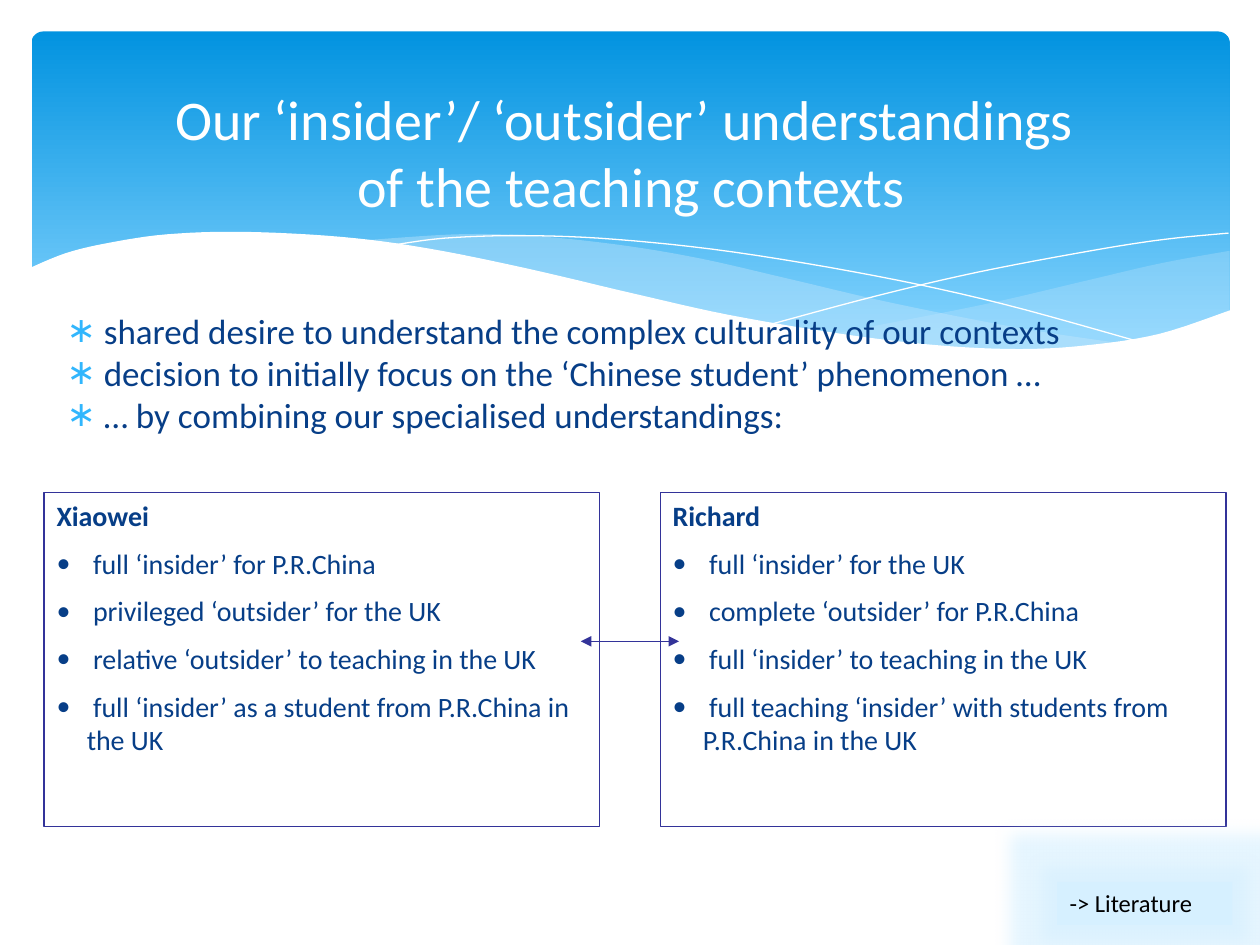
from dataclasses import dataclass

from lxml import etree
from pptx import Presentation
from pptx.dml.color import RGBColor
from pptx.enum.shapes import MSO_CONNECTOR, MSO_SHAPE
from pptx.enum.text import MSO_ANCHOR, PP_ALIGN
from pptx.oxml.ns import qn
from pptx.util import Inches, Pt

RECTANGLE, ROUNDED = MSO_SHAPE.RECTANGLE, MSO_SHAPE.ROUNDED_RECTANGLE
STRAIGHT = MSO_CONNECTOR.STRAIGHT
TOP, MIDDLE = MSO_ANCHOR.TOP, MSO_ANCHOR.MIDDLE
LEFT, CENTER = PP_ALIGN.LEFT, PP_ALIGN.CENTER
COLUMNS = 100  # square cells, so the slide has 75 rows


@dataclass(frozen=True)
class Theme:
    font: str = "Calibri"
    white: str = "FFFFFF"
    black: str = "000000"
    ink: str = "073E87"
    accent: str = "31B6FD"
    outline: str = "333399"
    sky_top: str = "0293E0"
    sky_bottom: str = "83D3FE"
    mist: str = "C6E7FC"
    pale: str = "D6F0FF"
    title: int = 32
    body: int = 20
    panel: int = 16
    note: int = 14
    rule: float = 0.75


def smooth(knots, steps=6):
    """Catmull-Rom curve through the knots."""
    padded = [knots[0], *knots, knots[-1]]
    points = [knots[0]]
    for a, b, c, d in zip(padded, padded[1:], padded[2:], padded[3:]):
        for step in range(1, steps + 1):
            t = step / steps
            points.append(tuple(
                (2 * q + (r - p) * t + (2 * p - 5 * q + 4 * r - s) * t ** 2
                 + (3 * q - p - 3 * r + s) * t ** 3) / 2
                for p, q, r, s in zip(a, b, c, d)))
    return points


def add_child(parent, tag, **attributes):
    return etree.SubElement(parent, qn(tag), attributes)


class SlideBuilder:
    """Places elements on a grid of square cells, COLUMNS across."""

    def __init__(self, deck, theme):
        self.theme = theme
        self.cell = deck.slide_width / COLUMNS
        self.page = deck.slides.add_slide(deck.slide_layouts[6])

    def grid(self, *cells):
        return [round(value * self.cell) for value in cells]

    def paint(self, shape, fill=None, line=None, width=0, opacity=None):
        shape.shadow.inherit = False
        if fill:
            shape.fill.solid()
            shape.fill.fore_color.rgb = RGBColor.from_string(fill)
        else:
            shape.fill.background()
        if opacity:
            color = next(shape._element.spPr.iter(qn("a:srgbClr")))
            add_child(color, "a:alpha", val=str(opacity * 1000))
        if line:
            shape.line.color.rgb = RGBColor.from_string(line)
            shape.line.width = Pt(width)
        else:
            shape.line.fill.background()

    def banner(self, *cells):
        shape = self.page.shapes.add_shape(ROUNDED, *self.grid(*cells))
        shape.adjustments[0] = 0.034
        self.paint(shape)
        shape.fill.gradient()
        shape.fill.gradient_angle = 270
        stops = shape.fill.gradient_stops
        for stop, position, color in zip(
                stops, (0, 0.9), (self.theme.sky_top, self.theme.sky_bottom)):
            stop.position = position
            stop.color.rgb = RGBColor.from_string(color)

    def wave(self, points, close=True, **style):
        start, *rest = [self.grid(*point) for point in points]
        builder = self.page.shapes.build_freeform(*start)
        builder.add_line_segments(rest, close=close)
        self.paint(builder.convert_to_shape(), **style)

    def box(self, *cells, **style):
        shape = self.page.shapes.add_shape(RECTANGLE, *self.grid(*cells))
        self.paint(shape, **style)
        return shape

    def text_box(self, *cells):
        return self.page.shapes.add_textbox(*self.grid(*cells))

    def frame(self, box, anchor=TOP):
        frame = box.text_frame
        frame.word_wrap = True
        frame.vertical_anchor = anchor
        return frame

    def add_text(self, para, text, size, color, bold=False, align=LEFT, gap=0):
        para.alignment = align
        para.space_before = Pt(gap)
        for index, part in enumerate(text.split("\n")):
            if index:
                para.add_line_break()
            span = para.add_run()
            span.text = part
            span.font.name = self.theme.font
            span.font.size = Pt(size)
            span.font.bold = bold
            span.font.color.rgb = RGBColor.from_string(color)

    def bullet(self, para, mark, margin, hang, color):
        properties = para._p.get_or_add_pPr()
        properties.set("marL", str(Inches(margin)))
        properties.set("indent", str(-Inches(hang)))
        add_child(add_child(properties, "a:buClr"), "a:srgbClr", val=color)
        add_child(properties, "a:buFont", typeface=self.theme.font)
        add_child(properties, "a:buChar", char=mark)

    def title(self, text, *cells):
        frame = self.frame(self.text_box(*cells), MIDDLE)
        self.add_text(frame.paragraphs[0], text, self.theme.title,
                      self.theme.white, align=CENTER)

    def bullets(self, items, *cells):
        frame = self.frame(self.text_box(*cells))
        for index, item in enumerate(items):
            para = frame.add_paragraph() if index else frame.paragraphs[0]
            self.add_text(para, item, self.theme.body, self.theme.ink)
            self.bullet(para, "∗", 0.28, 0.2, self.theme.accent)

    def panel(self, name, items, *cells):
        theme = self.theme
        frame = self.frame(self.box(*cells, line=theme.outline, width=theme.rule))
        self.add_text(frame.paragraphs[0], name, theme.panel, theme.ink, bold=True)
        for item in items:
            para = frame.add_paragraph()
            self.add_text(para, item, theme.panel, theme.ink, gap=theme.panel / 2)
            self.bullet(para, "•", 0.24, 0.24, theme.ink)

    def double_arrow(self, *cells):
        arrow = self.page.shapes.add_connector(STRAIGHT, *self.grid(*cells))
        arrow.line.color.rgb = RGBColor.from_string(self.theme.outline)
        arrow.line.width = Pt(self.theme.rule)
        properties = arrow._element.spPr
        line = properties.find(qn("a:ln"))
        for end in ("a:headEnd", "a:tailEnd"):
            add_child(line, end, type="triangle")
        add_child(properties, "a:effectLst")

    def glowing_note(self, text, *cells):
        box = self.box(*cells, fill=self.theme.pale)
        effects = box._element.spPr.find(qn("a:effectLst"))
        glow = add_child(effects, "a:glow", rad=str(Pt(18)))
        color = add_child(glow, "a:srgbClr", val=self.theme.pale)
        add_child(color, "a:alpha", val="60000")
        self.add_text(self.frame(box).paragraphs[0], text, self.theme.note,
                      self.theme.black)


def draw_header(builder, theme):
    builder.banner(2.5, 2.5, 95.1, 27)
    right_top = smooth([(97.6, 19.9), (92.1, 20.9), (86.1, 22.3), (77.9, 24.2), (66.1, 26.5)])
    right_base = smooth([(66.1, 26.5), (73.2, 27.4), (80.3, 27.8), (87.2, 27.4),
                         (92.8, 26.3), (97.6, 24.7)])
    builder.wave(right_top + right_base, fill=theme.mist, opacity=29)
    middle_top = smooth([(89.3, 27.3), (80.7, 26), (70.6, 24), (62.9, 22.2), (55.5, 20.5),
                         (48.9, 19.4), (42, 18.7), (36.1, 18.6), (28.6, 19.1)])
    middle_base = smooth([(28.6, 19.1), (36.2, 20.3), (44.9, 22.2), (56.6, 24.8), (66.5, 26.6),
                          (74.8, 27.6), (81.8, 27.8), (89.3, 27.3)])
    builder.wave(middle_top + middle_base, fill=theme.mist, opacity=40)
    falling = [(30.9, 19.5), (35.3, 18.9), (41.6, 18.7), (48.9, 19), (58.2, 20),
               (69.5, 21.9), (79.5, 24.1), (90.7, 27.2)]
    rising = [(61.3, 25.7), (69.5, 23.5), (77.6, 21.6), (86.6, 19.9), (92.4, 19), (97.5, 18.5)]
    for knots in (falling, rising):
        builder.wave(smooth(knots), close=False, line=theme.white)
    crest = smooth([(97.7, 24.6), (92, 26.5), (86.3, 27.4), (80.9, 27.7), (74.4, 27.4),
                    (66.8, 26.5), (57.9, 25), (50.3, 23.3), (41.8, 21.3), (33.9, 19.7),
                    (27.1, 18.8), (19.3, 18.4), (13.2, 18.6), (8.5, 19.3), (5.2, 20.1),
                    (2.3, 21.3)])
    builder.wave(crest + [(2.3, 32.9), (97.7, 32.9)], fill=theme.white)


def main():
    deck = Presentation()
    deck.slide_width, deck.slide_height = Inches(10), Inches(7.5)
    theme = Theme()
    builder = SlideBuilder(deck, theme)
    draw_header(builder, theme)
    builder.title("Our ‘insider’/ ‘outsider’ understandings \nof the teaching contexts",
                  5.1, 5.2, 90, 13.7)
    builder.bullets([" shared desire to understand the complex culturality of our contexts",
                     " decision to initially focus on the ‘Chinese student’ phenomenon …",
                     " … by combining our specialised understandings:"],
                    3.5, 24.1, 92.1, 6.3)
    builder.panel("Xiaowei", [" full ‘insider’ for P.R.China",
                              " privileged ‘outsider’ for the UK",
                              " relative ‘outsider’ to teaching in the UK",
                              " full ‘insider’ as a student from P.R.China in the UK"],
                  3.5, 39.1, 44.1, 26.5)
    builder.panel("Richard", [" full ‘insider’ for the UK",
                              " complete ‘outsider’ for P.R.China",
                              " full ‘insider’ to teaching in the UK",
                              " full teaching ‘insider’ with students from P.R.China in the UK"],
                  52.4, 39.1, 44.9, 26.5)
    builder.double_arrow(46.1, 50.9, 53.9, 50.9)
    builder.glowing_note("-> Literature", 83.9, 70, 13.9, 3.4)
    deck.save("out.pptx")


if __name__ == "__main__":
    main()
